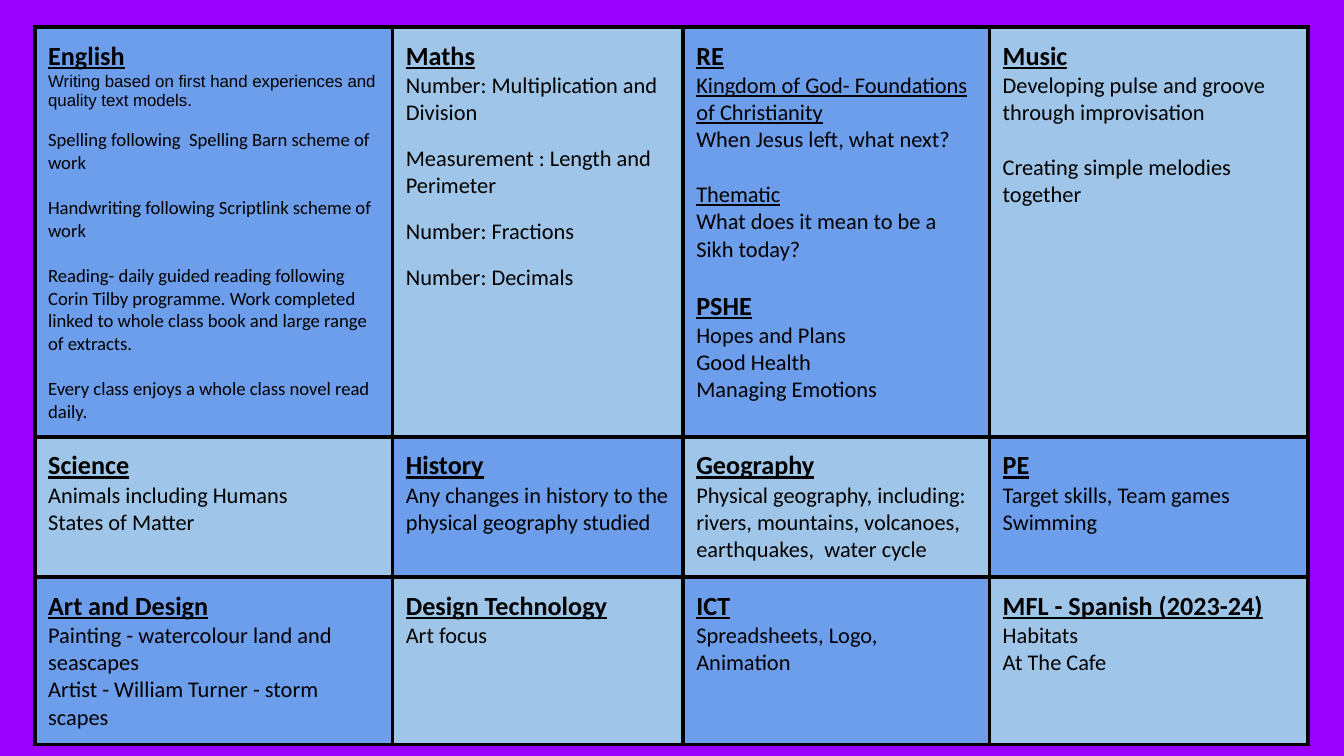
from lxml.etree import SubElement
from pptx import Presentation
from pptx.dml.color import RGBColor
from pptx.oxml import parse_xml
from pptx.oxml.ns import nsdecls
from pptx.util import Cm, Pt

PURPLE = RGBColor(0x99, 0x00, 0xFF)
BLUE = RGBColor(0x6D, 0x9E, 0xEB)
PALE = RGBColor(0x9F, 0xC5, 0xE8)
BLACK = RGBColor(0x00, 0x00, 0x00)

HEAD = ("Calibri", 14, True, True)
TOPIC = ("Calibri", 12, False, True)
BODY = ("Calibri", 12, False, False)
SMALL = ("Calibri", 10, False, False)
INTRO = ("Arial", 9, False, False)

SUBJECTS = [
    [
        [("English", HEAD, 0),
         ("Writing based on first hand experiences and quality text models.", INTRO, 0),
         ("Spelling following  Spelling Barn scheme of work", SMALL, 10.3),
         ("Handwriting following Scriptlink scheme of work", SMALL, 12.2),
         ("Reading- daily guided reading following Corin Tilby programme. Work completed "
          "linked to whole class book and large range of extracts.", SMALL, 12.2),
         ("Every class enjoys a whole class novel read daily.", SMALL, 12.2)],
        [("Maths", HEAD, 0),
         ("Number: Multiplication and Division", BODY, 0),
         ("Measurement : Length and Perimeter", BODY, 10),
         ("Number: Fractions", BODY, 10),
         ("Number: Decimals", BODY, 10)],
        [("RE", HEAD, 0),
         ("Kingdom of God- Foundations of Christianity", TOPIC, 0),
         ("When Jesus left, what next?", BODY, 0),
         ("Thematic", TOPIC, 14.6),
         ("What does it mean to be a Sikh today?", BODY, 0),
         ("PSHE", HEAD, 14.6),
         ("Hopes and Plans", BODY, 0),
         ("Good Health", BODY, 0),
         ("Managing Emotions", BODY, 0)],
        [("Music", HEAD, 0),
         ("Developing pulse and groove through improvisation", BODY, 0),
         ("Creating simple melodies together", BODY, 14.6)],
    ],
    [
        [("Science", HEAD, 0),
         ("Animals including Humans", BODY, 0),
         ("States of Matter", BODY, 0)],
        [("History", HEAD, 0),
         ("Any changes in history to the physical geography studied", BODY, 0)],
        [("Geography", HEAD, 0),
         ("Physical geography, including: rivers, mountains, volcanoes, "
          "earthquakes,  water cycle", BODY, 0)],
        [("PE", HEAD, 0),
         ("Target skills, Team games", BODY, 0),
         ("Swimming", BODY, 0)],
    ],
    [
        [("Art and Design", HEAD, 0),
         ("Painting - watercolour land and seascapes", BODY, 0),
         ("Artist - William Turner - storm scapes", BODY, 0)],
        [("Design Technology", HEAD, 0),
         ("Art focus", BODY, 0)],
        [("ICT", HEAD, 0),
         ("Spreadsheets, Logo, Animation", BODY, 0)],
        [("MFL - Spanish (2023-24)", HEAD, 0),
         ("Habitats", BODY, 0),
         ("At The Cafe", BODY, 0)],
    ],
]
COL_WIDTHS = [6.76, 5.49, 5.79, 6.02]
ROW_HEIGHTS = [7.26, 2.11, 2.11]
MARGIN = Cm(0.25)


def add_borders(cell):
    tc_pr = cell._tc.get_or_add_tcPr()
    for i, side in enumerate(("lnL", "lnR", "lnT", "lnB")):
        ln = parse_xml(f'<a:{side} {nsdecls("a")} w="{Pt(2.25)}"><a:solidFill/></a:{side}>')
        SubElement(ln[0], ln[0].tag.replace("solidFill", "srgbClr"), val=str(BLACK))
        tc_pr.insert(i, ln)


def write_paragraph(p, text, style, gap):
    name, size, bold, underline = style
    p.space_before = Pt(gap)
    r = p.add_run()
    r.text = text
    r.font.name = name
    r.font.size = Pt(size)
    r.font.bold = bold
    r.font.underline = underline
    r.font.color.rgb = BLACK


def fill_cell(cell, paragraphs, color):
    cell.margin_left = cell.margin_right = MARGIN
    cell.margin_top = cell.margin_bottom = MARGIN
    cell.fill.solid()
    cell.fill.fore_color.rgb = color
    add_borders(cell)
    tf = cell.text_frame
    for i, paragraph in enumerate(paragraphs):
        p = tf.add_paragraph() if i else tf.paragraphs[0]
        write_paragraph(p, *paragraph)


def main():
    prs = Presentation()
    prs.slide_width, prs.slide_height = Cm(25.4), Cm(14.29)
    s = prs.slides.add_slide(prs.slide_layouts[6])
    s.background.fill.solid()
    s.background.fill.fore_color.rgb = PURPLE

    table = s.shapes.add_table(
        len(ROW_HEIGHTS), len(COL_WIDTHS), Cm(0.66), Cm(0.51),
        Cm(sum(COL_WIDTHS)), Cm(sum(ROW_HEIGHTS))).table
    table.first_row = table.horz_banding = False
    for column, width in zip(table.columns, COL_WIDTHS):
        column.width = Cm(width)
    for row, height in zip(table.rows, ROW_HEIGHTS):
        row.height = Cm(height)
    for i, subjects in enumerate(SUBJECTS):
        for j, paragraphs in enumerate(subjects):
            fill_cell(table.cell(i, j), paragraphs, PALE if (i + j) % 2 else BLUE)

    prs.save("out.pptx")


if __name__ == "__main__":
    main()
